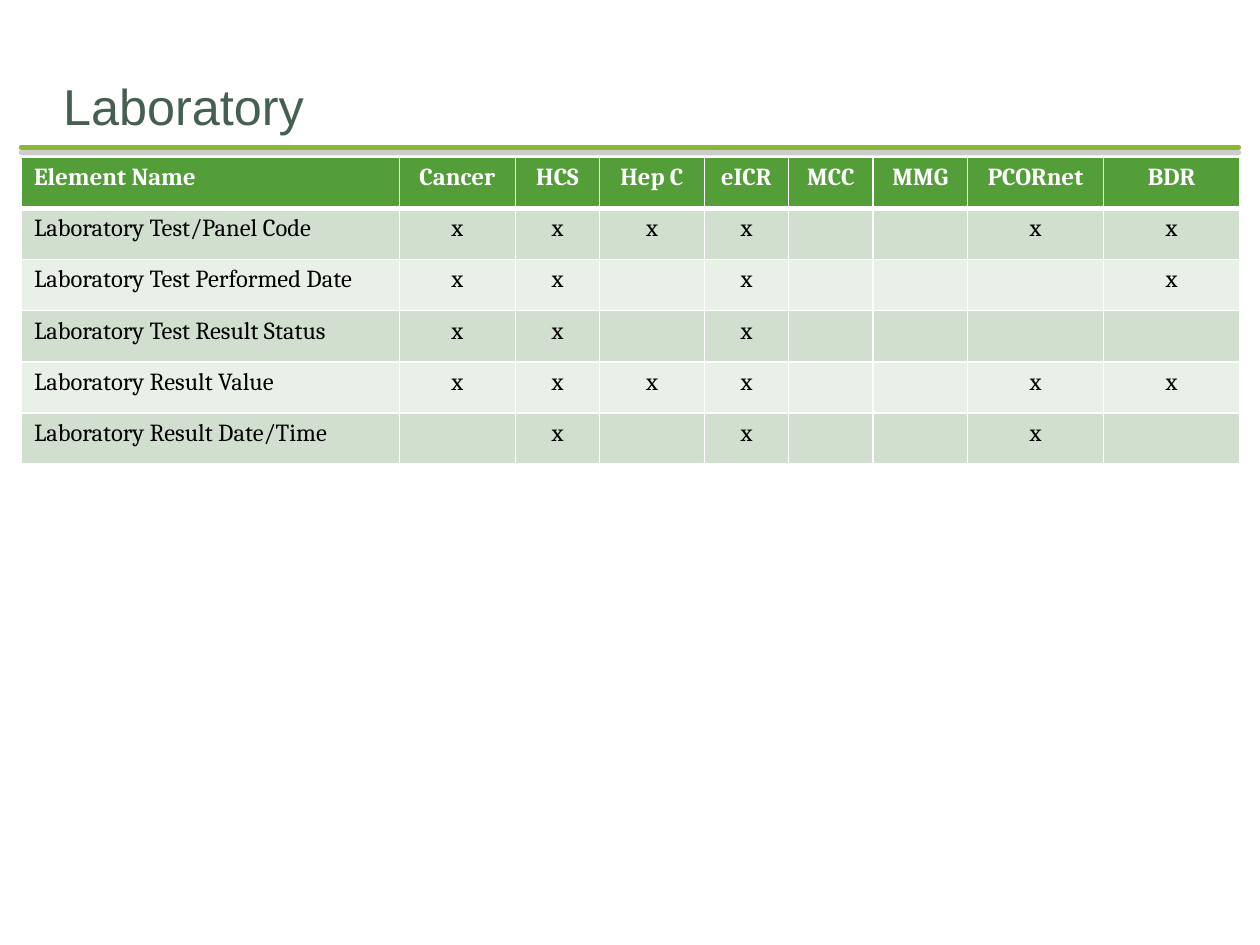
"""Build the Laboratory slide: a title, a rule and a table of elements by source."""
import pptx
import pptx.dml.color
import pptx.enum.shapes
import pptx.enum.text
import pptx.oxml
import pptx.oxml.ns
import pptx.util
from pptx.util import Inches

Align = pptx.enum.text.PP_ALIGN
THEME = {
    "title": {"name": "Arial", "size": 28.8, "bold": False, "color": "455F51"},
    "head": {"name": "Cambria", "size": 14, "bold": True, "color": "FFFFFF"},
    "body": {"name": "Cambria", "size": 14, "bold": False, "color": "000000"},
    "rule": "8AB833",
    "shade": "808080",
    "grid": "FFFFFF",
    "green": "549E39",
    "bands": ["D1DFCE", "E9F0E8"],
}
NAMES = ["Element Name", "Cancer", "HCS", "Hep C", "eICR", "MCC", "MMG", "PCORnet", "BDR"]
WIDTHS = [3, 0.92, 0.67, 0.83, 0.67, 0.67, 0.75, 1.08, 1.08]
MARKS = {
    "Laboratory Test/Panel Code": ["Cancer", "HCS", "Hep C", "eICR", "PCORnet", "BDR"],
    "Laboratory Test Performed Date": ["Cancer", "HCS", "eICR", "BDR"],
    "Laboratory Test Result Status": ["Cancer", "HCS", "eICR"],
    "Laboratory Result Value": ["Cancer", "HCS", "Hep C", "eICR", "PCORnet", "BDR"],
    "Laboratory Result Date/Time": ["HCS", "eICR", "PCORnet"],
}
NS = pptx.oxml.ns.nsdecls("a")


def write(frame, text, style, align):
    """Put one styled line of text in a frame."""
    par = frame.paragraphs[0]
    par.alignment = align
    run = par.add_run()
    run.text = text
    look = dict(THEME[style])
    run.font.color.rgb = pptx.dml.color.RGBColor.from_string(look.pop("color"))
    look["size"] = pptx.util.Pt(look["size"])
    for key, value in look.items():
        setattr(run.font, key, value)


def edge(cell, side, width):
    """Draw one border of a cell, ahead of its fill."""
    cell._tc.get_or_add_tcPr().append(pptx.oxml.parse_xml(
        f'<a:{side} {NS} w="{pptx.util.Pt(width)}"><a:solidFill>'
        f'<a:srgbClr val="{THEME["grid"]}"/></a:solidFill></a:{side}>'))


deck = pptx.Presentation()
deck.slide_width, deck.slide_height = Inches(10), Inches(7.5)
slide = deck.slides.add_slide(deck.slide_layouts[5])

rule = slide.shapes.add_connector(
    pptx.enum.shapes.MSO_CONNECTOR.STRAIGHT,
    Inches(0.17), Inches(1.17), Inches(9.83), Inches(1.17))
rule.line.color.rgb = pptx.dml.color.RGBColor.from_string(THEME["rule"])
rule.line.width = pptx.util.Pt(3)
rule.line._get_or_add_ln().set("cap", "rnd")
rule._element.spPr.append(pptx.oxml.parse_xml(
    f'<a:effectLst {NS}><a:outerShdw dist="{pptx.util.Pt(3)}" dir="5400000" rotWithShape="0">'
    f'<a:srgbClr val="{THEME["shade"]}"><a:alpha val="40000"/></a:srgbClr>'
    '</a:outerShdw></a:effectLst>'))

title = slide.shapes.title
place = {"left": 0.5, "top": 0.5, "width": 9, "height": 0.58}
for key, value in place.items():
    setattr(title, key, Inches(value))
frame = title.text_frame
inset = {"left": 0, "top": 0.05, "right": 0, "bottom": 0}
for key, value in inset.items():
    setattr(frame, f"margin_{key}", Inches(value))
frame.vertical_anchor = pptx.enum.text.MSO_ANCHOR.BOTTOM
write(frame, "Laboratory", "title", Align.LEFT)

rows = [NAMES]
for name, marks in MARKS.items():
    rows.append([name] + ["x" if source in marks else "" for source in NAMES[1:]])
table = slide.shapes.add_table(
    len(rows), len(NAMES), Inches(0.17), Inches(1.25),
    Inches(sum(WIDTHS)), Inches(2.43)).table
for col, width in zip(table.columns, WIDTHS):
    col.width = Inches(width)
for r, texts in enumerate(rows):
    table.rows[r].height = Inches(2.43 / len(rows))
    fill = THEME["bands"][(r - 1) % 2] if r else THEME["green"]
    for c, text in enumerate(texts):
        cell = table.cell(r, c)
        for side in ["lnL", "lnR", "lnT", "lnB"]:
            thick = (r, side) in [(0, "lnB"), (1, "lnT")]
            edge(cell, side, 3 if thick else 1)
        cell.fill.solid()
        cell.fill.fore_color.rgb = pptx.dml.color.RGBColor.from_string(fill)
        if text:
            write(cell.text_frame, text, "body" if r else "head",
                  Align.CENTER if c else Align.LEFT)

deck.save("out.pptx")
